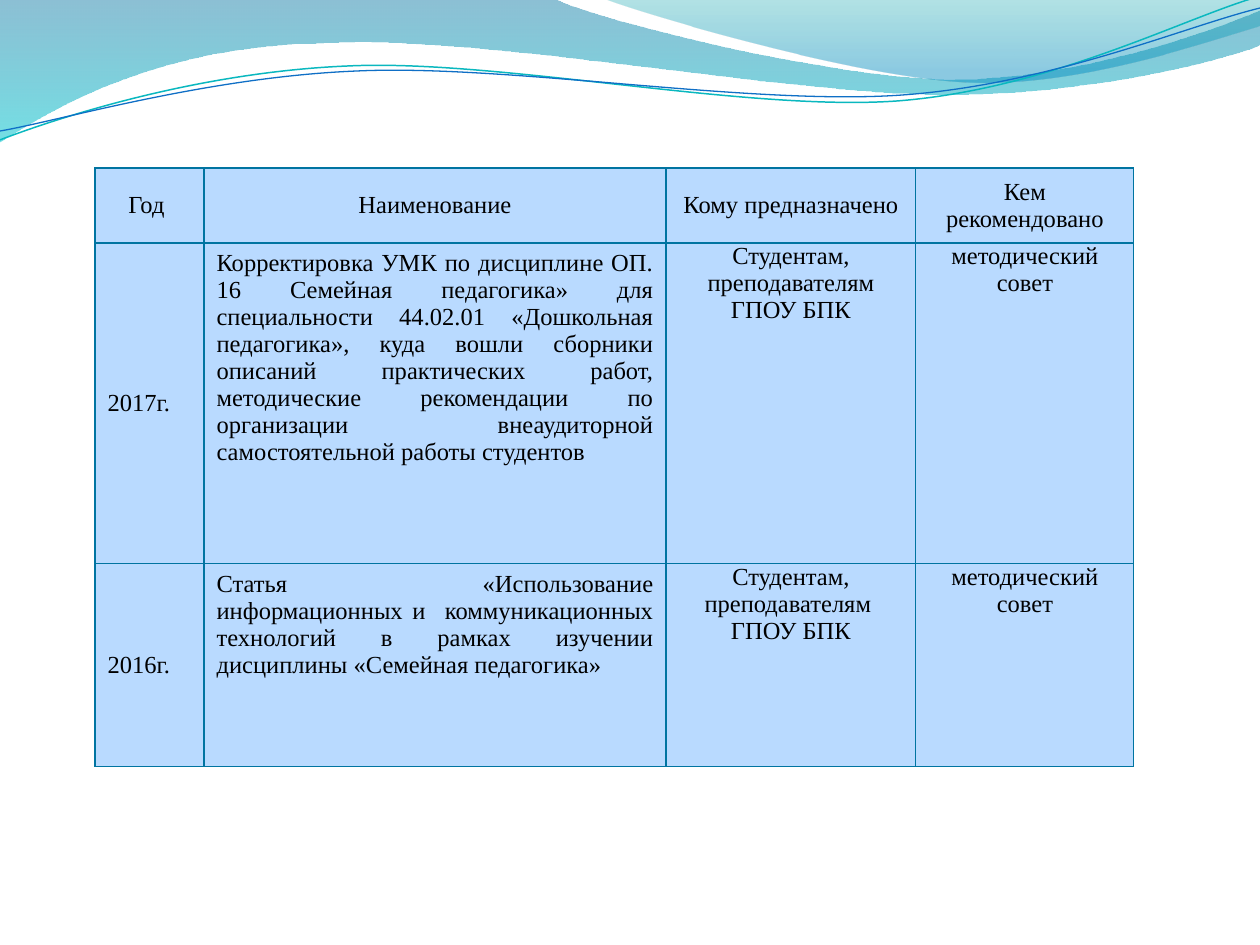
from math import cos, radians, sin

from lxml import etree
from pptx import Presentation, util as u
from pptx.dml.color import RGBColor
from pptx.enum import text
from pptx.oxml.ns import qn

PX = 914400 // 126
FONT = {"name": "Times New Roman", "size": u.Pt(14), "bold": False}
COLORS = {"cell": "B9DAFF", "border": "0074A1", "text": "000000",
          "teal_line": "0AB8BF", "blue_line": "0F6FC6"}
CURVE_TILT = 357.3

# A path is a start point, then steps: 2 numbers for a line, 6 for a Bézier curve.
WAVES = [
    {"start": (0, 0),
     "steps": [(554, -1), (600, 21, 837, 79, 955, 79), (1075, 79, 1207, 33, 1260, 11),
               (1261, 45), (1239, 55, 1096, 96, 940, 94), (784, 94, 481, 35, 324, 43),
               (163, 45, 58, 105, -1, 142), (0, 0)],
     "stops": [(0, "0074A1", 45), (1, "00C6CF", 55)]},
    {"start": (604, -1),
     "steps": [(641, 14, 859, 78, 969, 82), (1079, 87, 1211, 40, 1260, 26),
               (1260, 0), (604, -1)],
     "stops": [(0, "00A1A9", 30), (0.8, "008BBF", 45)]},
]
CURVES = [
    {"start": (0, 140), "pivot": (629, 72), "color": "teal_line", "width": 0.85,
     "steps": [(60, 117, 199, 72, 349, 66), (498, 59, 747, 112, 898, 101),
               (1050, 89, 1182, 19, 1257, -3)]},
    {"start": (0, 131), "pivot": (629, 74), "color": "blue_line", "width": 0.75,
     "steps": [(59, 121, 207, 77, 357, 71), (508, 64, 752, 106, 903, 95),
               (1053, 84, 1186, 26, 1260, 8)]},
]

TABLE_AT = (95, 168)
COLUMNS = [109, 462, 250, 218]
ROWS = [75, 321, 203]
CELLS = [
    ["Год ", "Наименование", "Кому предназначено", "Кем рекомендовано"],
    ["2017г.",
     "Корректировка УМК по дисциплине ОП. 16 Семейная педагогика» для специальности "
     "44.02.01 «Дошкольная педагогика», куда вошли сборники описаний практических работ, "
     "методические рекомендации по организации внеаудиторной самостоятельной работы студентов",
     "Студентам, преподавателям ГПОУ БПК", "методический совет"],
    ["2016г.",
     "Статья «Использование информационных и  коммуникационных технологий в рамках "
     "изучении дисциплины «Семейная педагогика»",
     "Студентам, преподавателям  ГПОУ БПК", "методический совет"],
]
BODY_ALIGN = [text.PP_ALIGN.LEFT, text.PP_ALIGN.JUSTIFY,
              text.PP_ALIGN.CENTER, text.PP_ALIGN.CENTER]


def rgb(name):
    return RGBColor.from_string(COLORS.get(name, name))


def turn(point, pivot, degrees):
    angle = radians(degrees)
    dx, dy = point[0] - pivot[0], point[1] - pivot[1]
    return (pivot[0] + dx * cos(angle) - dy * sin(angle),
            pivot[1] + dx * sin(angle) + dy * cos(angle))


def add_path(s, start, steps, close=False, pivot=(0, 0), tilt=0):
    """Build a freeform through all points, then join each curve's three into a Bézier."""
    points = [start] + [step[i:i + 2] for step in steps for i in range(0, len(step), 2)]
    points = [turn(point, pivot, -tilt) for point in points]
    points = [(round(x * PX), round(y * PX)) for x, y in points]
    builder = s.shapes.build_freeform(*points[0], scale=1.0)
    builder.add_line_segments(points[1:], close=close)
    sp = builder.convert_to_shape()
    lines = iter(list(sp._element.iter(qn("a:lnTo"))))
    for step in steps:
        first = next(lines)
        if len(step) == 6:
            first.tag = qn("a:cubicBezTo")
            for _ in range(2):
                extra = next(lines)
                first.append(extra[0])
                extra.getparent().remove(extra)
    sp.rotation = tilt
    sp.shadow.inherit = False
    return sp


def add_wave(s, wave):
    sp = add_path(s, wave["start"], wave["steps"], close=True)
    sp.line.fill.background()
    sp.fill.gradient()
    sp.fill.gradient_angle = 270
    for stop, (position, color, _) in zip(sp.fill.gradient_stops, wave["stops"]):
        stop.position = position
        stop.color.rgb = rgb(color)
    for clr, (_, _, alpha) in zip(sp._element.spPr.iter(qn("a:srgbClr")), wave["stops"]):
        etree.SubElement(clr, qn("a:alpha"), val=str(alpha * 1000))


def add_curve(s, curve):
    sp = add_path(s, curve["start"], curve["steps"], pivot=curve["pivot"], tilt=CURVE_TILT)
    sp.fill.background()
    sp.line.color.rgb = rgb(curve["color"])
    sp.line.width = u.Pt(curve["width"])


def set_borders(cell):
    tc_pr = cell._tc.get_or_add_tcPr()
    for i, side in enumerate(("lnL", "lnR", "lnT", "lnB")):
        ln = etree.Element(qn("a:" + side), w=str(u.Pt(0.75)))
        fill = etree.SubElement(ln, qn("a:solidFill"))
        etree.SubElement(fill, qn("a:srgbClr"), val=COLORS["border"])
        tc_pr.insert(i, ln)


def fill_cell(cell, words, row, col):
    cell.fill.solid()
    cell.fill.fore_color.rgb = rgb("cell")
    set_borders(cell)
    middle = row == 0 or col == 0
    cell.vertical_anchor = text.MSO_ANCHOR.MIDDLE if middle else text.MSO_ANCHOR.TOP
    if row and col >= 2:
        cell.margin_left = cell.margin_right = u.Inches(0.07)
        cell.margin_top = cell.margin_bottom = 0
    p = cell.text_frame.paragraphs[0]
    p.alignment = BODY_ALIGN[col] if row else text.PP_ALIGN.CENTER
    r = p.add_run()
    r.text = words
    for key, value in FONT.items():
        setattr(r.font, key, value)
    r.font.color.rgb = rgb("text")


def add_grid(s):
    box = (*TABLE_AT, sum(COLUMNS), sum(ROWS))
    table = s.shapes.add_table(len(ROWS), len(COLUMNS), *(v * PX for v in box)).table
    table.first_row = table.horz_banding = False
    for column, width in zip(table.columns, COLUMNS):
        column.width = width * PX
    for i, (height, words) in enumerate(zip(ROWS, CELLS)):
        table.rows[i].height = height * PX
        for j, word in enumerate(words):
            fill_cell(table.cell(i, j), word, i, j)


def main():
    prs = Presentation()
    prs.slide_width, prs.slide_height = u.Inches(10), u.Inches(7.5)
    s = prs.slides.add_slide(prs.slide_layouts[6])
    for wave in WAVES:
        add_wave(s, wave)
    for curve in CURVES:
        add_curve(s, curve)
    add_grid(s)
    prs.save("out.pptx")


if __name__ == "__main__":
    main()
